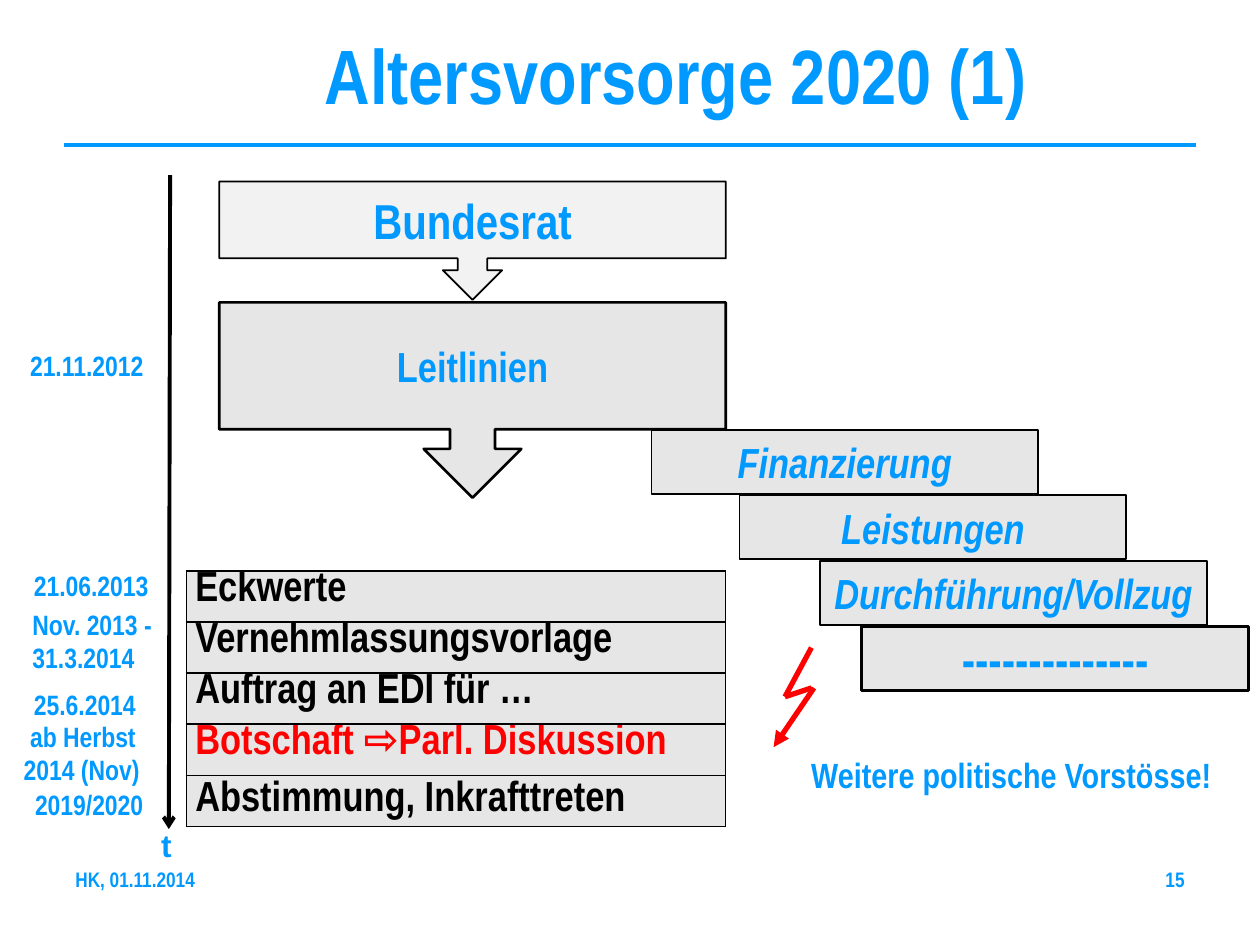
from dataclasses import dataclass

from lxml import etree
from pptx import Presentation
from pptx.dml.color import RGBColor
from pptx.enum.shapes import MSO_CONNECTOR, MSO_SHAPE
from pptx.enum.text import MSO_ANCHOR, MSO_AUTO_SIZE, PP_ALIGN
from pptx.oxml.ns import qn
from pptx.util import Inches, Pt

LEFT, MID, RIGHT = PP_ALIGN.LEFT, PP_ALIGN.CENTER, PP_ALIGN.RIGHT
TOP, CENTER = MSO_ANCHOR.TOP, MSO_ANCHOR.MIDDLE
RECT, CALLOUT = MSO_SHAPE.RECTANGLE, MSO_SHAPE.DOWN_ARROW_CALLOUT
FIT = MSO_AUTO_SIZE.SHAPE_TO_FIT_TEXT
STRAIGHT = MSO_CONNECTOR.STRAIGHT


@dataclass(frozen=True)
class Theme:
    blue: RGBColor = RGBColor(0x00, 0x99, 0xFF)
    black: RGBColor = RGBColor(0, 0, 0)
    red: RGBColor = RGBColor(0xFF, 0, 0)
    pale: RGBColor = RGBColor(0xF2, 0xF2, 0xF2)
    gray: RGBColor = RGBColor(0xE6, 0xE6, 0xE6)
    font: str = "Arial Narrow"
    title: int = 44
    head: int = 28
    body: int = 24
    note: int = 20
    axis: int = 18
    date: int = 16
    foot: int = 12


T = Theme()


def write(frame, text, size, color=T.blue, font=T.font, italic=None,
          align=LEFT, anchor=TOP, wrap=True, fit=False):
    """Fill a text frame, one paragraph for each line of text."""
    frame.word_wrap = wrap
    frame.vertical_anchor = anchor
    if fit:
        frame.auto_size = FIT
    for i, part in enumerate(text.split("\n")):
        para = frame.add_paragraph() if i else frame.paragraphs[0]
        para.alignment = align
        run = para.add_run()
        run.text = part
        run.font.size, run.font.name = Pt(size), font
        run.font.bold, run.font.italic = True, italic
        run.font.color.rgb = color


def draw(start, end, color, width, tip=None):
    """Draw a straight line, with an arrowhead at its end if tip is given."""
    line = shapes.add_connector(STRAIGHT, *map(Inches, start + end))
    line.line.color.rgb, line.line.width = color, Pt(width)
    etree.SubElement(line._element.spPr, qn("a:effectLst"))
    if tip:
        etree.SubElement(line.line._get_or_add_ln(), qn("a:tailEnd"), type=tip)


deck = Presentation()
deck.slide_width, deck.slide_height = Inches(10), Inches(7.5)
slide = deck.slides.add_slide(deck.slide_layouts[6])
shapes = slide.shapes

draw((0.51, 1.15), (9.49, 1.15), T.blue, 2)

# Callouts and the staircase of topics
step = 0.52
blocks = [
    (CALLOUT, (1.74, 1.44, 4.02, 0.94), "Bundesrat", T.head, T.pale, 1, None),
    (CALLOUT, (1.74, 2.4, 4.02, 1.55), "Leitlinien", T.body, T.gray, 1.5, None),
]
topics = [
    (5.17, "Finanzierung", T.body, 1, True),
    (5.87, "Leistungen", T.body, 1, True),
    (6.51, "Durchführung/Vollzug", T.body, 1, True),
    (6.84, "--------------", T.head, 1.5, None),
]
for i, (left, text, size, edge, slant) in enumerate(topics):
    place = (left, 3.41 + i * step, 3.07, 0.51)
    blocks.append((RECT, place, text, size, T.gray, edge, slant))

for kind, place, text, size, fill, edge, slant in blocks:
    block = shapes.add_shape(kind, *map(Inches, place))
    block.shadow.inherit = False
    block.fill.solid()
    block.fill.fore_color.rgb = fill
    block.line.color.rgb, block.line.width = T.black, Pt(edge)
    if text == "Leitlinien":
        block.adjustments[0] = 0.23
    write(block.text_frame, text, size, italic=slant, align=MID, anchor=CENTER)

# Time axis
draw((1.35, 1.39), (1.34, 6.58), T.black, 2.25, "arrow")

# Milestones
stages = [
    ("Eckwerte", T.black, TOP),
    ("Vernehmlassungsvorlage", T.black, TOP),
    ("Auftrag an EDI für …", T.black, TOP),
    ("Botschaft ⇨Parl. Diskussion", T.red, TOP),
    ("Abstimmung, Inkrafttreten", T.black, CENTER),
]
grid = shapes.add_table(len(stages), 1, Inches(1.48), Inches(4.53),
                        Inches(4.28), Inches(2.03)).table
grid.first_row = grid.horz_banding = False
for i, (text, color, anchor) in enumerate(stages):
    cell = grid.cell(i, 0)
    cell.margin_left = cell.margin_right = Inches(0.07)
    cell.margin_top = cell.margin_bottom = 0
    cell.vertical_anchor = anchor
    props = cell._tc.get_or_add_tcPr()
    for side in ("lnL", "lnR", "lnT", "lnB"):
        edge = etree.SubElement(props, qn("a:" + side), w=str(Pt(1)))
        fill = etree.SubElement(edge, qn("a:solidFill"))
        etree.SubElement(fill, qn("a:srgbClr"), val=str(T.black))
    cell.fill.solid()
    cell.fill.fore_color.rgb = T.gray
    write(cell.text_frame, text, T.body, color, anchor=anchor)

# Lightning bolt
draw((6.44, 5.14), (6.23, 5.53), T.red, 3)
draw((6.23, 5.53), (6.44, 5.46), T.red, 3)
draw((6.46, 5.46), (6.14, 5.93), T.red, 3, "triangle")

# Free text
free = dict(wrap=False, fit=True)
grow = dict(fit=True)
labels = [
    ((2.48, 0.17, 5.83, 0.84), "Altersvorsorge 2020 (1)", T.title, free),
    ((0.14, 2.72, 1.11, 0.37), "21.11.2012", T.date, free),
    ((0.17, 4.46, 1.12, 0.37), "21.06.2013", T.date, free),
    ((0.16, 4.77, 1.16, 0.64), "Nov. 2013 -\n31.3.2014", T.date, free),
    ((0.12, 5.41, 1.25, 0.37), " 25.6.2014", T.date, grow),
    ((0.09, 5.66, 1.64, 0.64), " ab Herbst\n2014 (Nov)", T.date, grow),
    ((0.18, 6.2, 1.07, 0.37), "2019/2020", T.date, free),
    ((1.18, 6.51, 0.29, 0.4), "t", T.axis, dict(free, font="Arial")),
    ((6.34, 5.93, 3.4, 0.44), "Weitere politische Vorstösse!", T.note, free),
    ((0.5, 6.83, 2.33, 0.52), "HK, 01.11.2014", T.foot, {}),
    ((7.17, 6.83, 2.33, 0.52), "15", T.foot, dict(align=RIGHT)),
]
for place, text, size, style in labels:
    box = shapes.add_textbox(*map(Inches, place))
    write(box.text_frame, text, size, **style)

deck.save("out.pptx")
